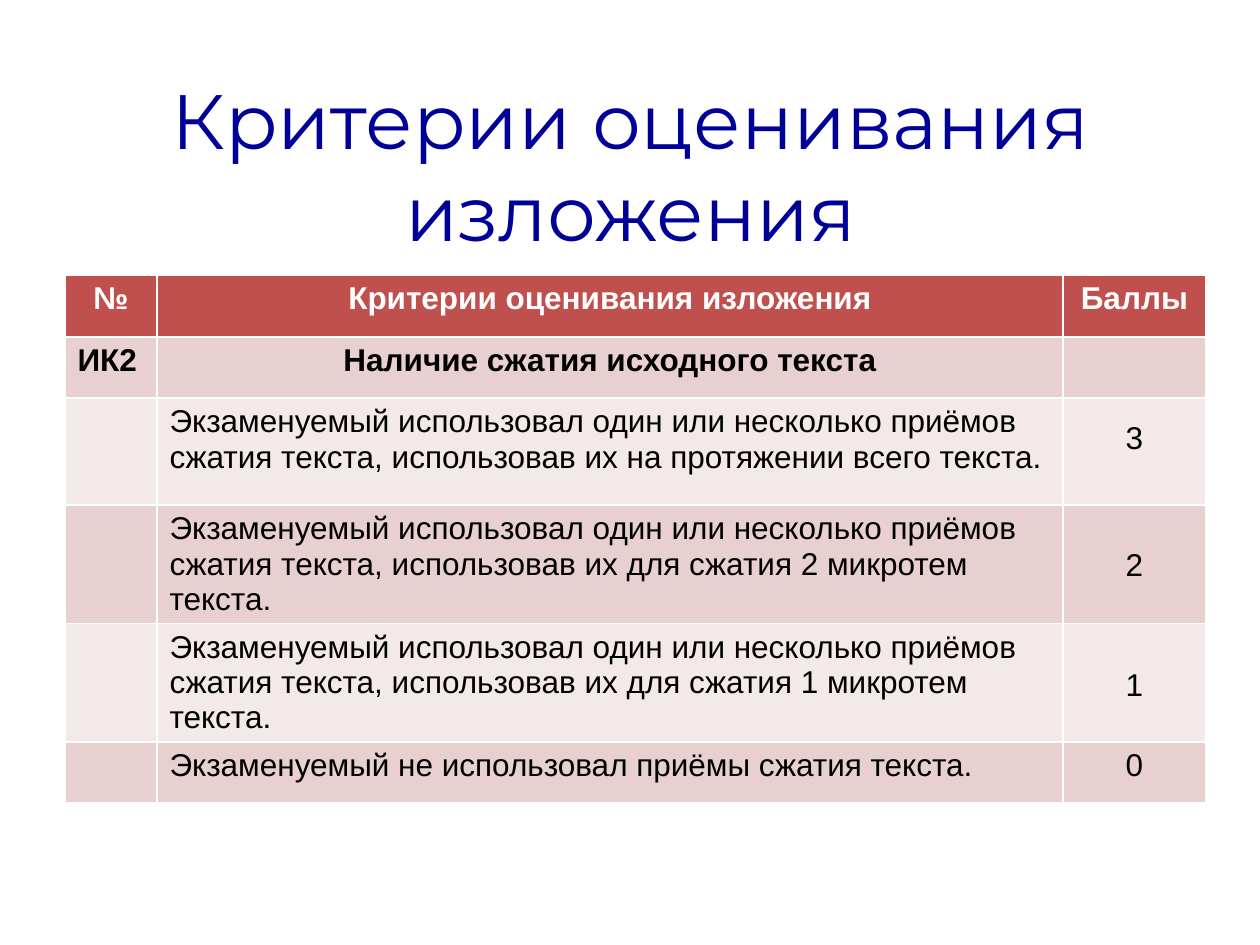
from pptx import Presentation
from pptx.dml.color import RGBColor
from pptx.enum.text import MSO_ANCHOR, MSO_AUTO_SIZE, PP_ALIGN
from pptx.util import Emu, Pt

PX = 914400 // 126


def px(length):
    return Emu(length * PX)


def add_run(paragraph, text, font, size, color, bold=False):
    run = paragraph.add_run()
    run.text = text
    run.font.name = font
    run.font.size = Pt(size)
    run.font.bold = bold
    run.font.color.rgb = RGBColor.from_string(color)


presentation = Presentation()
presentation.slide_width = px(1260)
presentation.slide_height = px(945)
slide = presentation.slides.add_slide(presentation.slide_layouts[5])

# Title
title = slide.shapes.title
title.left, title.top, title.width, title.height = px(64), px(86), px(1134), px(157)
title_frame = title.text_frame
title_frame.word_wrap = True
title_frame.auto_size = MSO_AUTO_SIZE.NONE
title_frame.vertical_anchor = MSO_ANCHOR.MIDDLE
title_paragraph = title_frame.paragraphs[0]
title_paragraph.alignment = PP_ALIGN.CENTER
add_run(title_paragraph, "Критерии оценивания изложения", "Montserrat", 44, "000099")

# Criteria table: row height, extra space above the score, cell texts
USED = "Экзаменуемый использовал один или несколько приёмов сжатия текста, использовав их "
rows = [
    (62, 0, ["№", "Критерии оценивания изложения", "Баллы"]),
    (61, 0, ["ИК2", "Наличие сжатия исходного текста", ""]),
    (107, 17, ["", USED + "на протяжении всего текста.", "3"]),
    (107, 37, ["", USED + "для сжатия 2 микротем текста.", "2"]),
    (107, 39, ["", USED + "для сжатия 1 микротем текста.", "1"]),
    (61, 0, ["", "Экзаменуемый не использовал приёмы сжатия текста.", "0"]),
]
column_widths = [92, 906, 143]
table = slide.shapes.add_table(
    len(rows), len(column_widths), px(65), px(275),
    px(sum(column_widths)), px(sum(height for height, _, _ in rows)),
).table
for column, width in zip(table.columns, column_widths):
    column.width = px(width)

for row_index, (height, score_offset, texts) in enumerate(rows):
    table.rows[row_index].height = px(height)
    is_header = row_index == 0
    fill = "C0504D" if is_header else ("E8D0D0" if row_index % 2 else "F4E9E9")
    for column_index, text in enumerate(texts):
        cell = table.cell(row_index, column_index)
        cell.fill.solid()
        cell.fill.fore_color.rgb = RGBColor.from_string(fill)
        if not text:
            continue
        is_score = column_index == 2
        if is_score:
            cell.margin_top = px(6 + score_offset)
        is_heading = row_index < 2
        centered = is_header or is_score or (is_heading and column_index == 1)
        paragraph = cell.text_frame.paragraphs[0]
        paragraph.alignment = PP_ALIGN.CENTER if centered else PP_ALIGN.LEFT
        add_run(paragraph, text, "Arial", 18, "FFFFFF" if is_header else "000000", is_heading)

presentation.save("out.pptx")
